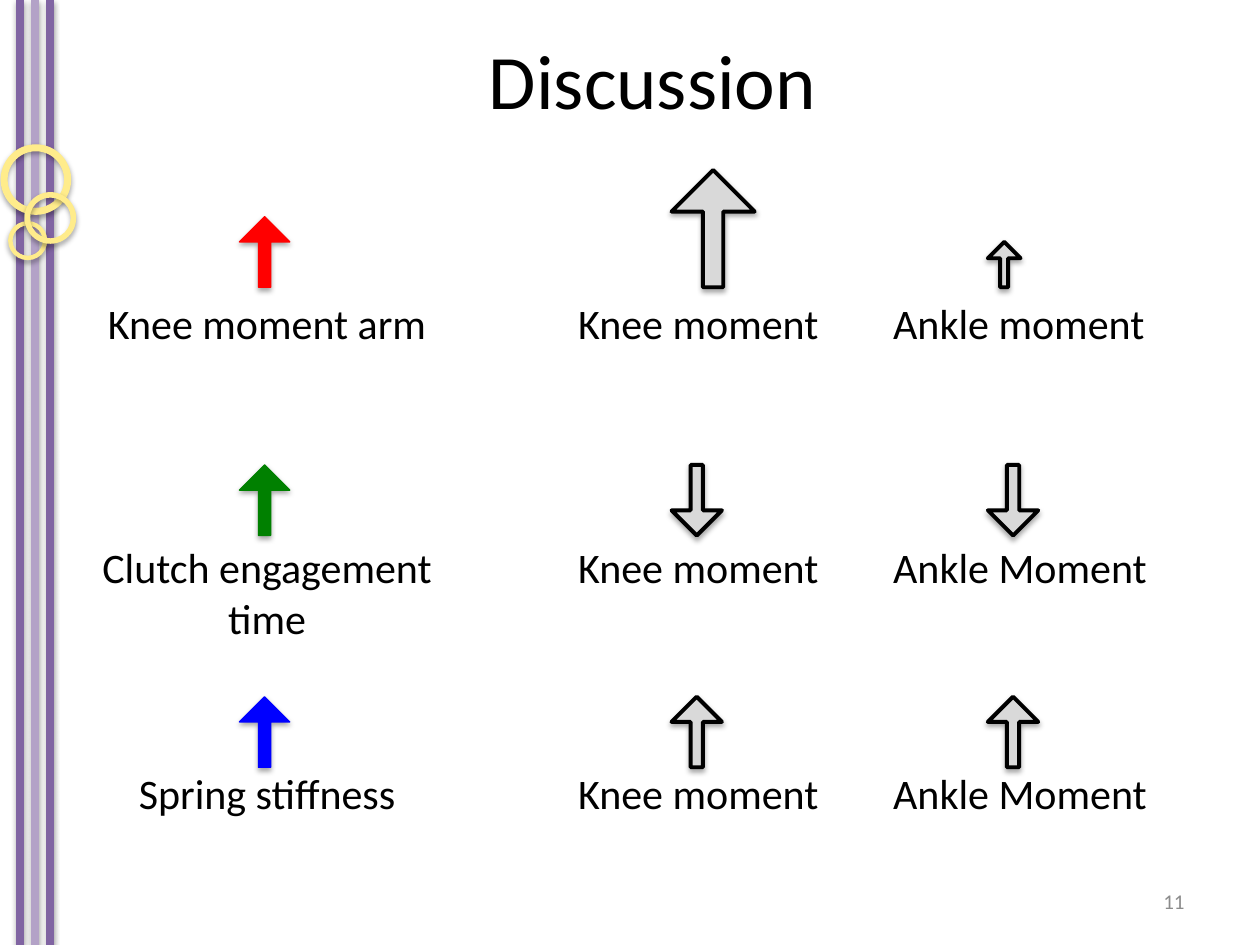
from lxml.etree import SubElement
from pptx import Presentation
from pptx.dml.color import RGBColor
from pptx.enum.shapes import MSO_CONNECTOR, MSO_SHAPE
from pptx.enum.text import MSO_ANCHOR, PP_ALIGN
from pptx.oxml.ns import qn
from pptx.util import Inches, Pt

WIDTH, HEIGHT = 10, 7.5
FONT, BLACK, GREY, RING = "Calibri", "000000", "D9D9D9", "FFEC8B"

# Content: rail (x, colour); ring (left, top, diameter)
RAILS = [(0.16, "8064A2"), (0.28, "B3A2C7"), (0.4, "8064A2")]
RINGS = [(0.01, 1.15, 0.55), (0.07, 1.76, 0.3), (0.2, 1.53, 0.4)]

# Arrow sizes (width, height) and rows of cause and effects
SMALL, MEDIUM, LARGE = (0.26, 0.36), (0.4, 0.56), (0.66, 0.93)
UP, DOWN = 0, 180
ROWS = [
    {"cause": "Knee moment arm", "colour": "FF0000", "effects": "Knee moment\t\tAnkle moment",
     "arrows": [(LARGE, UP), (SMALL, UP)], "base": 2.28, "text_top": 2.31},
    {"cause": "Clutch engagement time", "colour": "008000", "effects": "Knee moment\t\tAnkle Moment",
     "arrows": [(MEDIUM, DOWN), (MEDIUM, DOWN)], "base": 4.25, "text_top": 4.25},
    {"cause": "Spring stiffness", "colour": "0000FF", "effects": "Knee moment\t\tAnkle Moment",
     "arrows": [(MEDIUM, UP), (MEDIUM, UP)], "base": 6.09, "text_top": 6.04},
]
CAUSE_LEFT, CAUSE_WIDTH, CAUSE_ARROW = 0.68, 2.88, 1.9
EFFECT_LEFT, EFFECT_WIDTH, EFFECT_ARROWS = 4.49, 5.01, (5.33, 7.84)
TAB_STOPS = (2, 2.5)

deck = Presentation()
deck.slide_width, deck.slide_height = Inches(WIDTH), Inches(HEIGHT)
page = deck.slides.add_slide(deck.slide_layouts[6])


def rgb(colour):
    return RGBColor.from_string(colour)


def add_shadow(shape, distance, opacity):
    effects = SubElement(shape._element.spPr, qn("a:effectLst"))
    shadow = SubElement(effects, qn("a:outerShdw"), blurRad=str(Pt(3.1)),
                        dist=str(Pt(distance)), dir="5400000", rotWithShape="0")
    tint = SubElement(shadow, qn("a:srgbClr"), val=BLACK)
    SubElement(tint, qn("a:alpha"), val=str(opacity * 1000))


def add_figure(kind, left, top, size, fill, line, weight, adjustments):
    shape = page.shapes.add_shape(kind, Inches(left), Inches(top), *map(Inches, size))
    shape.fill.solid()
    shape.fill.fore_color.rgb = rgb(fill)
    shape.line.color.rgb = rgb(line)
    shape.line.width = Pt(weight)
    for index, value in enumerate(adjustments):
        shape.adjustments[index] = value
    add_shadow(shape, 1.8, 35)
    return shape


def add_arrow(left, base, size, fill, line, weight, rotation=UP):
    arrow = add_figure(MSO_SHAPE.UP_ARROW, left, base - size[1], size,
                       fill, line, weight, (0.244, 0.5))
    arrow.rotation = rotation


def add_text(text, left, top, width, height, size=24, colour=BLACK,
             align=PP_ALIGN.LEFT, anchor=MSO_ANCHOR.TOP):
    box = page.shapes.add_textbox(*map(Inches, (left, top, width, height)))
    for name, value in {"word_wrap": True, "vertical_anchor": anchor}.items():
        setattr(box.text_frame, name, value)
    para = box.text_frame.paragraphs[0]
    para.alignment = align
    span = para.add_run()
    span.text = text
    for name, value in {"name": FONT, "size": Pt(size)}.items():
        setattr(span.font, name, value)
    span.font.color.rgb = rgb(colour)
    return para


# Side ornament
for x, colour in RAILS:
    rail = page.shapes.add_connector(MSO_CONNECTOR.STRAIGHT, Inches(x), 0, Inches(x), Inches(HEIGHT))
    rail.line.color.rgb = rgb(colour)
    rail.line.width = Pt(4.5)
    add_shadow(rail, 1.6, 38)
for left, top, diameter in RINGS:
    add_figure(MSO_SHAPE.DONUT, left, top, (diameter, diameter), RING, RING, 0.75, (0.083,))

# Title and page number
add_text("Discussion", 0.68, 0, 9, 1.25, size=44, align=PP_ALIGN.CENTER, anchor=MSO_ANCHOR.MIDDLE)
add_text("11", 7.17, 6.95, 2.33, 0.4, size=12, colour="8C8C8C",
         align=PP_ALIGN.RIGHT, anchor=MSO_ANCHOR.MIDDLE)

# Each row: cause on the left, its effects on the right
for row in ROWS:
    colour, base, top = row["colour"], row["base"], row["text_top"]
    add_arrow(CAUSE_ARROW, base, MEDIUM, colour, colour, 0.75)
    add_text(row["cause"], CAUSE_LEFT, top, CAUSE_WIDTH, 0.5, align=PP_ALIGN.CENTER)
    para = add_text(row["effects"], EFFECT_LEFT, top, EFFECT_WIDTH, 0.81)
    tabs = SubElement(para._p.get_or_add_pPr(), qn("a:tabLst"))
    for stop in TAB_STOPS:
        SubElement(tabs, qn("a:tab"), pos=str(Inches(stop)), algn="l")
    for left, (size, rotation) in zip(EFFECT_ARROWS, row["arrows"]):
        add_arrow(left, base, size, GREY, BLACK, 2.25, rotation)

deck.save("out.pptx")
